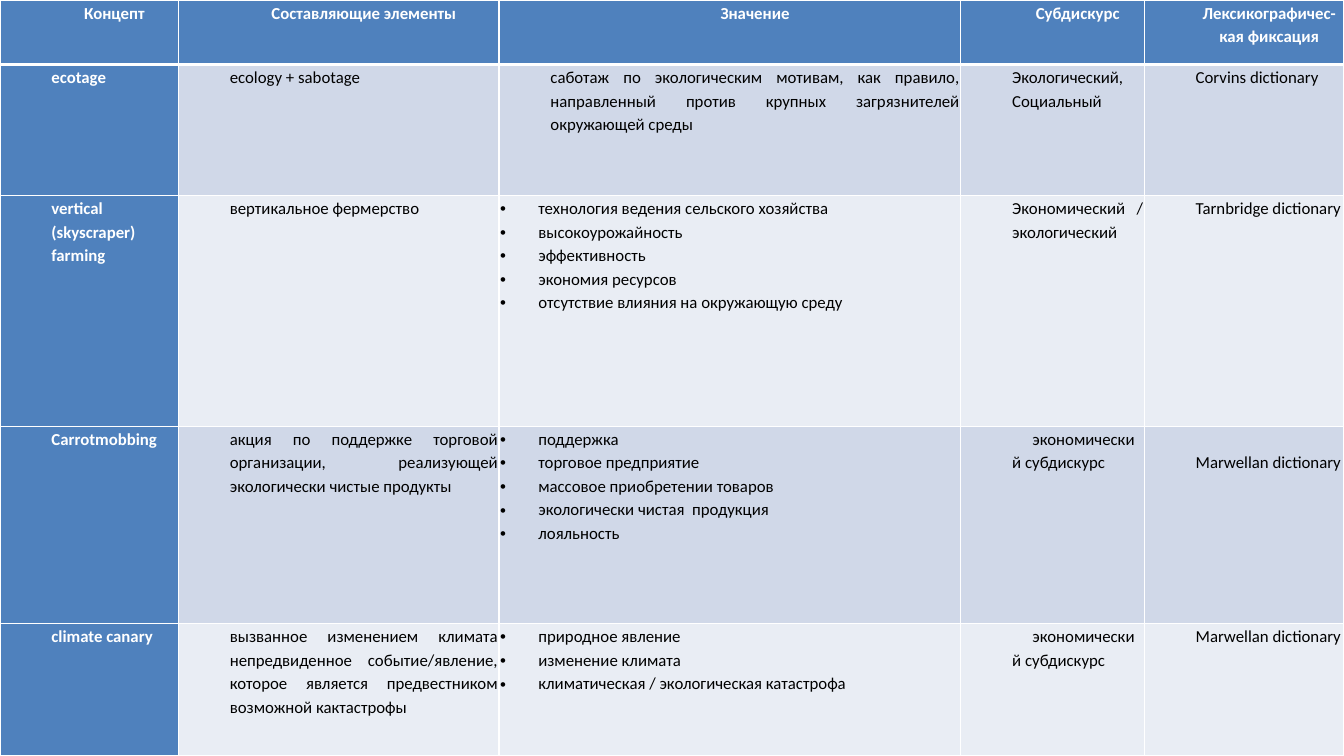
from dataclasses import dataclass

import pptx
import pptx.dml.color
import pptx.enum.text
import pptx.oxml
import pptx.oxml.ns
import pptx.util

ALIGN = pptx.enum.text.PP_ALIGN


@dataclass(frozen=True)
class Theme:
    font: str = "Calibri"
    size: float = 12
    line_spacing: float = 1.15
    accent: str = "4F81BD"
    bands: tuple = ("D0D8E8", "E9EDF4")
    light: str = "FFFFFF"
    dark: str = "000000"
    indent: float = 0.5
    bullet_indent: float = 0.38
    hint: float = 0.2
    pad: float = 0.01
    line_drop: float = 0.23
    rule: float = 1
    header_rule: float = 3


THEME = Theme()
COLUMNS = (1.77, 3.18, 4.58, 1.82, 1.98)
ROWS = (0.64, 1.3, 2.29, 1.96, 1.31)

HEADER = ("Концепт", "Составляющие элементы", "Значение", "Субдискурс",
          "Лексикографичес-кая фиксация")

# A tuple of lines is a bulleted list; a newline starts a paragraph.
CONCEPTS = (
    ("ecotage", "ecology + sabotage",
     "саботаж по экологическим мотивам, как правило, направленный против "
     "крупных загрязнителей окружающей среды",
     "Экологический,\nСоциальный", "Corvins dictionary"),
    ("vertical (skyscraper) farming", "вертикальное фермерство",
     ("технология ведения сельского хозяйства", "высокоурожайность",
      "эффективность", "экономия ресурсов",
      "отсутствие влияния на окружающую среду"),
     "Экономический / экологический", "Tarnbridge dictionary"),
    ("Carrotmobbing",
     "акция по поддержке торговой организации, реализующей экологически "
     "чистые продукты",
     ("поддержка", "торговое предприятие", "массовое приобретении товаров",
      "экологически чистая  продукция", "лояльность"),
     "экономический субдискурс", "Marwellan dictionary"),
    ("climate canary",
     "вызванное изменением климата непредвиденное событие/явление, которое "
     "является предвестником возможной кактастрофы",
     ("природное явление", "изменение климата",
      "климатическая / экологическая катастрофа"),
     "экономический субдискурс", "Marwellan dictionary"),
)
FIRST_LINE_INDENTED = {(3, 3), (4, 3)}
STARTS_ONE_LINE_LOWER = {(3, 4)}


def rgb(color):
    return pptx.dml.color.RGBColor.from_string(color)


def add_xml(parent, xml, index=None):
    element = pptx.oxml.parse_xml(
        xml.replace(" ", f" {pptx.oxml.ns.nsdecls('a')} ", 1))
    parent.insert(len(parent) if index is None else index, element)


def write(tf, text, *, color=THEME.dark, bold=False, align=ALIGN.JUSTIFY,
          first_line=0):
    bulleted = isinstance(text, tuple)
    lines = text if bulleted else text.split("\n")
    left = THEME.bullet_indent if bulleted else THEME.indent
    first = -left if bulleted else first_line
    for i, line in enumerate(lines):
        p = tf.add_paragraph() if i else tf.paragraphs[0]
        p.alignment = align
        p.line_spacing = THEME.line_spacing
        p.space_before = p.space_after = pptx.util.Pt(0)
        pPr = p._p.get_or_add_pPr()
        pPr.set("marL", str(pptx.util.Inches(left)))
        pPr.set("indent", str(pptx.util.Inches(first)))
        if bulleted:
            add_xml(pPr, '<a:buFont typeface="Arial"/>')
            add_xml(pPr, '<a:buChar char="•"/>')
        r = p.add_run()
        r.text = line
        r.font.name = THEME.font
        r.font.size = pptx.util.Pt(THEME.size)
        r.font.bold = bold
        r.font.color.rgb = rgb(color)


def style_cell(cell, fill, bottom, top):
    cell.fill.solid()
    cell.fill.fore_color.rgb = rgb(fill)
    cell.margin_left = cell.margin_right = pptx.util.Inches(THEME.pad)
    cell.margin_top, cell.margin_bottom = pptx.util.Inches(top), 0
    tcPr = cell._tc.get_or_add_tcPr()
    for i, side in enumerate("LRTB"):
        width = pptx.util.Pt(bottom if side == "B" else THEME.rule)
        add_xml(tcPr, f'<a:ln{side} w="{width}"><a:solidFill><a:srgbClr '
                      f'val="{THEME.light}"/></a:solidFill></a:ln{side}>', i)


def concept_table(s, left, top, width, height):
    table = s.shapes.add_table(len(ROWS), len(COLUMNS),
                               left, top, width, height).table
    for column, share in zip(table.columns, COLUMNS):
        column.width = int(width * share / sum(COLUMNS))
    for row, share in zip(table.rows, ROWS):
        row.height = int(height * share / sum(ROWS))

    for y, texts in enumerate((HEADER,) + CONCEPTS):
        for x, text in enumerate(texts):
            heading = y == 0 or x == 0
            cell = table.cell(y, x)
            style_cell(
                cell,
                fill=THEME.accent if heading else THEME.bands[(y - 1) % 2],
                bottom=THEME.rule if y else THEME.header_rule,
                top=THEME.line_drop if (y, x) in STARTS_ONE_LINE_LOWER else 0)
            write(cell.text_frame, text, bold=heading,
                  color=THEME.light if heading else THEME.dark,
                  align=ALIGN.JUSTIFY if y else ALIGN.CENTER,
                  first_line=THEME.hint if (y, x) in FIRST_LINE_INDENTED else 0)


def main():
    prs = pptx.Presentation()
    prs.slide_width = pptx.util.Inches(13.33)
    prs.slide_height = pptx.util.Inches(7.5)
    s = prs.slides.add_slide(prs.slide_layouts[6])
    concept_table(s, 0, 0, prs.slide_width, prs.slide_height)
    prs.save("out.pptx")


if __name__ == "__main__":
    main()
